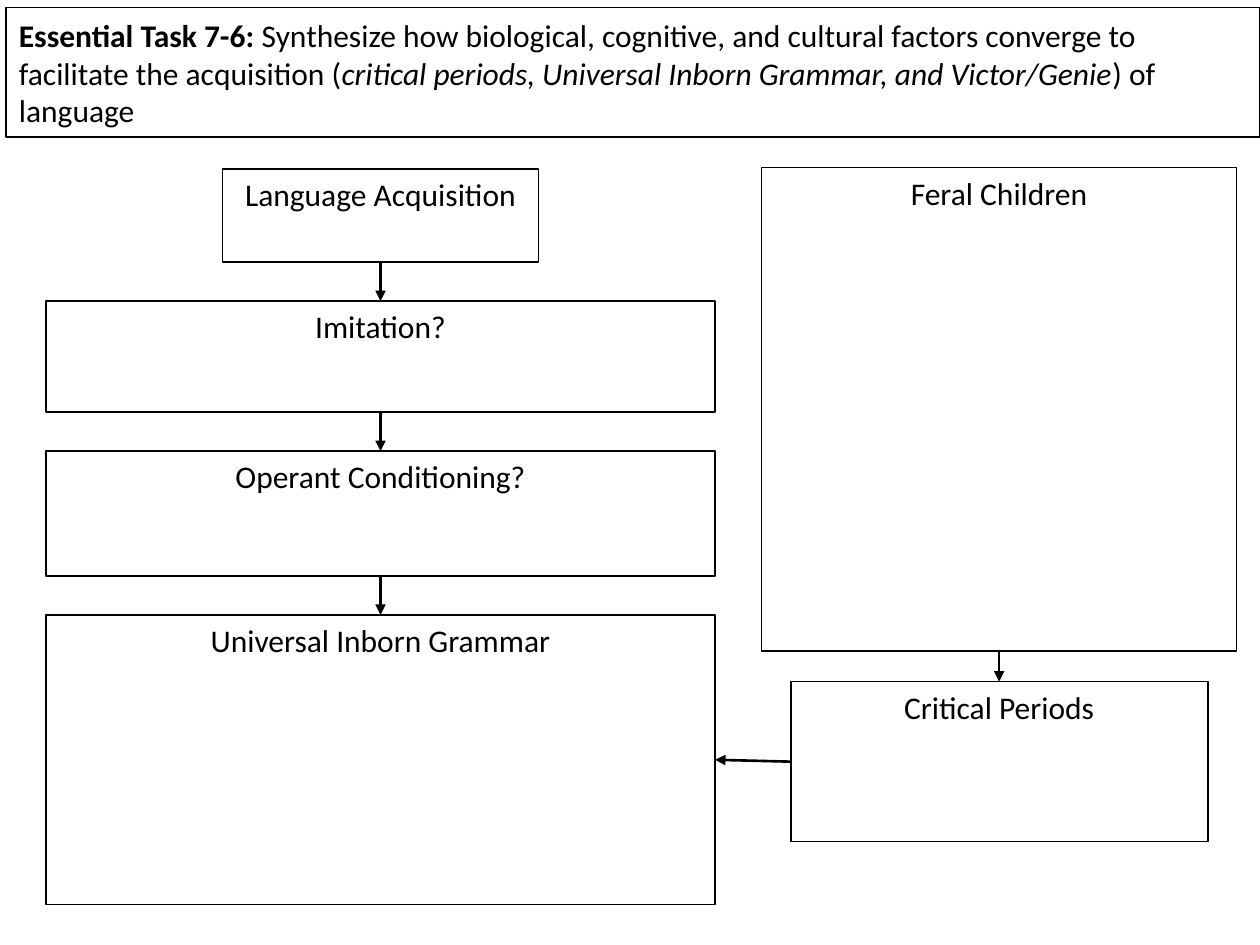
from lxml import etree
from pptx import Presentation
from pptx.dml.color import RGBColor
from pptx.enum.shapes import MSO_CONNECTOR, MSO_SHAPE
from pptx.enum.text import MSO_ANCHOR, MSO_AUTO_SIZE, PP_ALIGN
from pptx.oxml.ns import qn
from pptx.util import Inches, Pt

RECTANGLE = MSO_SHAPE.RECTANGLE
STRAIGHT = MSO_CONNECTOR.STRAIGHT
TOP, MIDDLE = MSO_ANCHOR.TOP, MSO_ANCHOR.MIDDLE
LEFT, CENTER = PP_ALIGN.LEFT, PP_ALIGN.CENTER
NO_FIT = MSO_AUTO_SIZE.NONE
TOP_SITE, LEFT_SITE, BOTTOM_SITE, RIGHT_SITE = range(4)

BLACK = RGBColor(0, 0, 0)
WHITE = RGBColor(255, 255, 255)
FONT = "Calibri"
TITLE_ONLY = 5
COLUMNS, ROWS = 100, 75
CELL = Inches(0.1)

TASK = [
    ("Essential Task 7-6: ", True, False),
    ("Synthesize how biological, cognitive, and cultural factors converge to "
     "facilitate the acquisition (", False, False),
    ("critical periods, Universal Inborn Grammar, and Victor/Genie", False, True),
    (") of language", False, False),
]
ACQUISITION_STEPS = [
    ("Language Acquisition", 25.1, 7.4),
    ("Imitation?", 53.1, 8.8),
    ("Operant Conditioning?", 53.1, 9.9),
    ("Universal Inborn Grammar", 53.1, 23),
]
EVIDENCE_STEPS = [
    ("Feral Children", 37.7, 38.4),
    ("Critical Periods", 33.1, 12.7),
]


def grid(cells):
    return round(cells * CELL)


def frame(shape, anchor):
    shape.fill.solid()
    shape.fill.fore_color.rgb = WHITE
    shape.line.color.rgb = BLACK
    shape.line.width = Pt(1)
    shape.text_frame.word_wrap = True
    shape.text_frame.auto_size = NO_FIT
    shape.text_frame.vertical_anchor = anchor


def style(span, bold=False, italic=False):
    font = span.font
    font.name, font.size = FONT, Pt(18)
    font.bold, font.italic = bold, italic
    font.color.rgb = BLACK


def add_task(page, left, top, width, height):
    title = page.shapes.title
    title.left, title.top = grid(left), grid(top)
    title.width, title.height = grid(width), grid(height)
    frame(title, MIDDLE)
    para = title.text_frame.paragraphs[0]
    para.alignment = LEFT
    for wording, bold, italic in TASK:
        span = para.add_run()
        span.text = wording
        style(span, bold, italic)


def add_step(page, label, left, top, width, height):
    box = page.shapes.add_shape(
        RECTANGLE, grid(left), grid(top), grid(width), grid(height))
    box.shadow.inherit = False
    frame(box, TOP)
    box.text_frame.text = label
    para = box.text_frame.paragraphs[0]
    para.alignment = CENTER
    style(para.runs[0])
    return box


def add_arrow(page, start, start_site, end, end_site):
    arrow = page.shapes.add_connector(STRAIGHT, 0, 0, 0, 0)
    arrow.begin_connect(start, start_site)
    arrow.end_connect(end, end_site)
    arrow.line.color.rgb = BLACK
    arrow.line.width = Pt(1.5)
    etree.SubElement(arrow.line._get_or_add_ln(), qn("a:tailEnd"), type="triangle")
    etree.SubElement(arrow._element.spPr, qn("a:effectLst"))


def add_flow(page, steps, center, top, gap):
    boxes = []
    for label, width, height in steps:
        boxes.append(add_step(page, label, center - width / 2, top, width, height))
        top += height + gap
    for upper, lower in zip(boxes, boxes[1:]):
        add_arrow(page, upper, BOTTOM_SITE, lower, TOP_SITE)
    return boxes


def main():
    deck = Presentation()
    deck.slide_width, deck.slide_height = grid(COLUMNS), grid(ROWS)
    page = deck.slides.add_slide(deck.slide_layouts[TITLE_ONLY])
    add_task(page, 0.5, 0.6, 99.5, 10.3)
    acquisition = add_flow(page, ACQUISITION_STEPS, 30.2, 13.4, 3.1)
    evidence = add_flow(page, EVIDENCE_STEPS, 79.3, 13.3, 2.4)
    add_arrow(page, evidence[-1], LEFT_SITE, acquisition[-1], RIGHT_SITE)
    deck.save("out.pptx")


if __name__ == "__main__":
    main()
